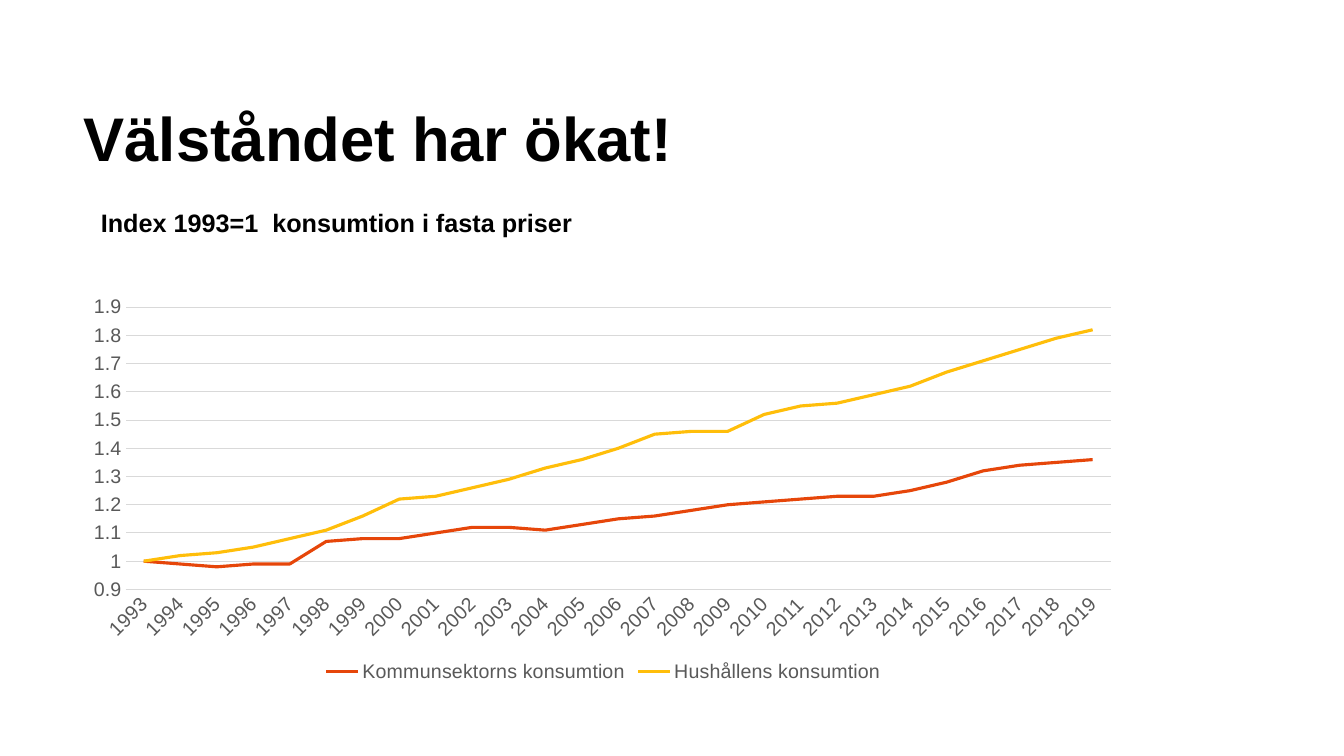
"""Build the slide on the growth of consumption in Sweden since 1993."""
from lxml import etree
from pptx import Presentation
from pptx.chart.data import CategoryChartData
from pptx.dml.color import RGBColor
from pptx.enum.chart import XL_CHART_TYPE as ChartType
from pptx.enum.chart import XL_LEGEND_POSITION as LegendPosition
from pptx.enum.chart import XL_MARKER_STYLE as MarkerStyle
from pptx.enum.chart import XL_TICK_MARK as TickMark
from pptx.enum.text import MSO_ANCHOR, MSO_AUTO_SIZE, PP_ALIGN
from pptx.oxml import parse_xml
from pptx.oxml.ns import nsdecls
from pptx.util import Inches, Pt

FONT = "Arial"
BLACK = RGBColor(0x00, 0x00, 0x00)
GREY = RGBColor(0x59, 0x59, 0x59)
LIGHT_GREY = RGBColor(0xD9, 0xD9, 0xD9)
ORANGE = RGBColor(0xE6, 0x46, 0x0A)
YELLOW = RGBColor(0xFF, 0xBE, 0x0A)

# text, size, space before, left indent
HEADING = [
    ("Välståndet har ökat!", 44, 0, 0),
    ("Index 1993=1  konsumtion i fasta priser", 18, 24, 0.17),
]
YEARS = [str(year) for year in range(1993, 2020)]
SERIES = [
    ("Kommunsektorns konsumtion", ORANGE,
     [1, 0.99, 0.98, 0.99, 0.99, 1.07, 1.08, 1.08, 1.1, 1.12, 1.12, 1.11, 1.13, 1.15,
      1.16, 1.18, 1.2, 1.21, 1.22, 1.23, 1.23, 1.25, 1.28, 1.32, 1.34, 1.35, 1.36]),
    ("Hushållens konsumtion", YELLOW,
     [1, 1.02, 1.03, 1.05, 1.08, 1.11, 1.16, 1.22, 1.23, 1.26, 1.29, 1.33, 1.36, 1.4,
      1.45, 1.46, 1.46, 1.52, 1.55, 1.56, 1.59, 1.62, 1.67, 1.71, 1.75, 1.79, 1.82]),
]
LEFT, WIDTH = 0.73, 10.51
TITLE_TOP, TITLE_HEIGHT = 0.96, 1.35
CHART_TOP, CHART_HEIGHT = 2.3, 4.51
PLOT_LEFT, PLOT_TOP, PLOT_WIDTH, PLOT_HEIGHT = 1.25, 3.05, 9.77, 2.8


def style_font(font, size, color, bold=False):
    """Apply the slide's typeface with a size, colour and weight."""
    font.name = FONT
    font.size = Pt(size)
    font.bold = bold
    font.color.rgb = color


def style_line(line, color, width):
    """Set the colour and width of a line."""
    line.color.rgb = color
    line.width = Pt(width)


def add_heading(page):
    """Fill the title placeholder with the heading and its subtitle."""
    title = page.shapes.title
    title.left, title.top = Inches(LEFT), Inches(TITLE_TOP)
    title.width, title.height = Inches(WIDTH), Inches(TITLE_HEIGHT)
    frame = title.text_frame
    frame.word_wrap = True
    frame.auto_size = MSO_AUTO_SIZE.NONE
    frame.vertical_anchor = MSO_ANCHOR.TOP
    frame.margin_top = Inches(0.09)
    for index, (text, size, before, indent) in enumerate(HEADING):
        para = frame.add_paragraph() if index else frame.paragraphs[0]
        para.alignment = PP_ALIGN.LEFT
        para.line_spacing = 0.95
        para.space_before = Pt(before)
        para._p.get_or_add_pPr().set("marL", str(Inches(indent)))
        span = para.add_run()
        span.text = text
        style_font(span.font, size, BLACK, bold=True)


def place_plot(chart):
    """Fix the inner plot area at its place within the chart."""
    fractions = {
        "x": (PLOT_LEFT - LEFT) / WIDTH,
        "y": (PLOT_TOP - CHART_TOP) / CHART_HEIGHT,
        "w": PLOT_WIDTH / WIDTH,
        "h": PLOT_HEIGHT / CHART_HEIGHT,
    }
    layout = parse_xml(f"<c:layout {nsdecls('c')}><c:manualLayout/></c:layout>")
    namespace = layout.nsmap["c"]
    settings = [("layoutTarget", "inner"), ("xMode", "edge"), ("yMode", "edge")]
    settings += [(name, f"{value:.3f}") for name, value in fractions.items()]
    for name, value in settings:
        etree.SubElement(layout[0], f"{{{namespace}}}{name}").set("val", value)
    plot_area = chart._chartSpace.chart.plotArea
    for old in plot_area.findall(f"{{{namespace}}}layout"):
        plot_area.remove(old)
    plot_area.insert(0, layout)


def style_axes(chart):
    """Format both axes, the gridlines and the slanted year labels."""
    years, values = chart.category_axis, chart.value_axis
    for axis in (years, values):
        axis.major_tick_mark = axis.minor_tick_mark = TickMark.NONE
        style_font(axis.tick_labels.font, 14, GREY)
    style_line(years.format.line, LIGHT_GREY, 0.75)
    years._element.txPr.bodyPr.set("rot", "-2700000")
    values.minimum_scale, values.maximum_scale = 0.9, 1.9
    values.major_unit = 0.1
    values.format.line.fill.background()
    values.has_major_gridlines = True
    style_line(values.major_gridlines.format.line, LIGHT_GREY, 0.75)


def add_consumption_chart(page):
    """Add the line chart of municipal and household consumption."""
    data = CategoryChartData()
    data.categories = YEARS
    for name, _, values in SERIES:
        data.add_series(name, values)
    chart = page.shapes.add_chart(
        ChartType.LINE, Inches(LEFT), Inches(CHART_TOP),
        Inches(WIDTH), Inches(CHART_HEIGHT), data).chart
    style_font(chart.font, 14, BLACK)
    chart.has_title = False
    chart.has_legend = True
    chart.legend.position = LegendPosition.BOTTOM
    chart.legend.include_in_layout = False
    style_font(chart.legend.font, 14, GREY)
    plot = chart.plots[0]
    plot.vary_by_categories = False
    for series, (_, color, _) in zip(plot.series, SERIES):
        series.smooth = False
        series.marker.style = MarkerStyle.NONE
        style_line(series.format.line, color, 2.25)
    style_axes(chart)
    place_plot(chart)


def main():
    """Create and save the deck."""
    deck = Presentation()
    deck.slide_width, deck.slide_height = Inches(13.33), Inches(7.5)
    page = deck.slides.add_slide(deck.slide_layouts[5])
    add_heading(page)
    add_consumption_chart(page)
    deck.save("out.pptx")


if __name__ == "__main__":
    main()
